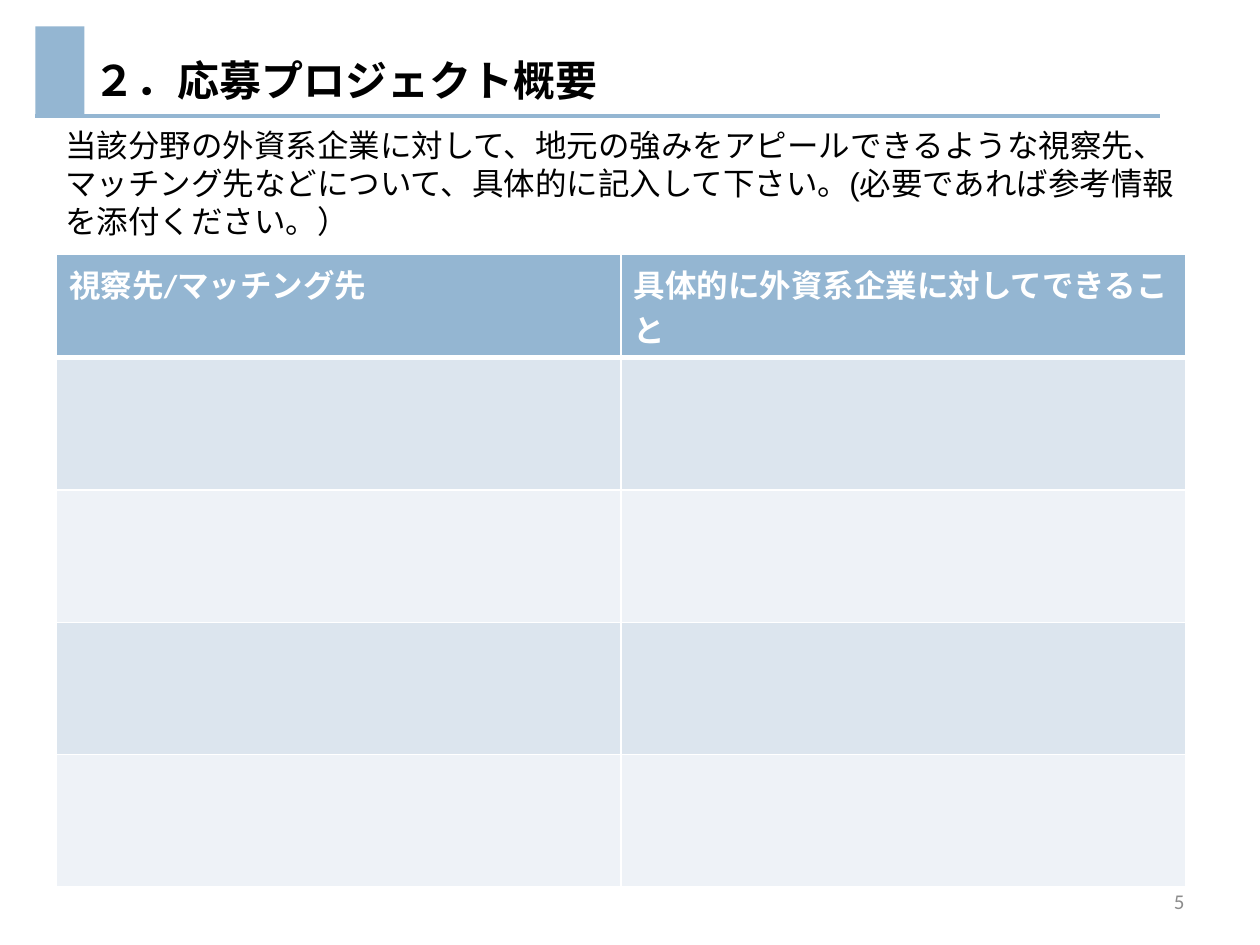
from lxml import etree
from pptx import Presentation
from pptx.dml.color import RGBColor
from pptx.enum import shapes, text
from pptx.oxml import ns
from pptx.util import Inches, Pt

COLORS = {"accent": "94B6D2", "band_dark": "DCE5EE", "band_light": "EEF2F7",
          "white": "FFFFFF", "black": "000000", "gray": "8C8C8C"}

TITLE = "２．応募プロジェクト概要"
INSTRUCTIONS = ("当該分野の外資系企業に対して、地元の強みをアピールできるような視察先、"
                "マッチング先などについて、具体的に記入して下さい。(必要であれば参考情報を添付ください。）")
HEADERS = ["視察先/マッチング先", "具体的に外資系企業に対してできること"]
PAGE_NUMBER = "5"
ENTRY_ROWS = 4
COLUMN_WIDTH, HEADER_HEIGHT, ENTRY_HEIGHT = 4.48, 0.82, 1.05


def color(name):
    return RGBColor.from_string(COLORS[name])


def write(text_frame, content, size, font="Calibri", fill="black", bold=False):
    text_frame.text = content
    paragraph = text_frame.paragraphs[0]
    run_font = paragraph.runs[0].font
    run_font.name, run_font.size, run_font.bold = font, Pt(size), bold
    run_font.color.rgb = color(fill)
    return paragraph


def add_text(slide, box, content, size, anchor=text.MSO_ANCHOR.MIDDLE, **style):
    text_frame = slide.shapes.add_textbox(*map(Inches, box)).text_frame
    text_frame.word_wrap = True
    text_frame.vertical_anchor = anchor
    return write(text_frame, content, size, **style)


def set_borders(cell, bottom_width):
    properties = cell._tc.get_or_add_tcPr()
    widths = {"lnL": 1, "lnR": 1, "lnT": 1, "lnB": bottom_width}
    for index, (side, width) in enumerate(widths.items()):
        line = etree.Element(ns.qn("a:" + side), w=str(Pt(width)))
        fill = etree.SubElement(line, ns.qn("a:solidFill"))
        etree.SubElement(fill, ns.qn("a:srgbClr"), val=COLORS["white"])
        properties.insert(index, line)


def add_heading(slide):
    rule = slide.shapes.add_connector(shapes.MSO_CONNECTOR.STRAIGHT,
                                      *map(Inches, (0.28, 0.92, 9.21, 0.92)))
    rule.line.color.rgb = color("accent")
    rule.line.width = Pt(2)
    etree.SubElement(rule._element.spPr, ns.qn("a:effectLst"))
    block = slide.shapes.add_shape(shapes.MSO_SHAPE.RECTANGLE,
                                   *map(Inches, (0.28, 0.21, 0.39, 0.71)))
    block.shadow.inherit = False
    block.fill.solid()
    block.fill.fore_color.rgb = color("accent")
    block.line.fill.background()
    add_text(slide, (0.64, 0.36, 7.48, 0.54), TITLE, 24, bold=True)


def add_entry_table(slide):
    heights = [HEADER_HEIGHT] + [ENTRY_HEIGHT] * ENTRY_ROWS
    width = COLUMN_WIDTH * len(HEADERS)
    table = slide.shapes.add_table(len(heights), len(HEADERS), Inches(0.45), Inches(2.02),
                                   Inches(width), Inches(sum(heights))).table
    for column in table.columns:
        column.width = Inches(COLUMN_WIDTH)
    for index, height in enumerate(heights):
        table.rows[index].height = Inches(height)
        band = "accent" if index == 0 else "band_dark" if index % 2 else "band_light"
        for cell, header in zip(table.rows[index].cells, HEADERS):
            cell.fill.solid()
            cell.fill.fore_color.rgb = color(band)
            set_borders(cell, 3 if index == 0 else 1)
            if index == 0:
                write(cell.text_frame, header, 18, fill="white", bold=True)


def main():
    presentation = Presentation()
    presentation.slide_width, presentation.slide_height = Inches(10), Inches(7.5)
    slide = presentation.slides.add_slide(presentation.slide_layouts[6])
    add_heading(slide)
    add_text(slide, (0.42, 0.95, 9, 1.05), INSTRUCTIONS, 18,
             anchor=text.MSO_ANCHOR.TOP, font="Arial")
    add_entry_table(slide)
    number = add_text(slide, (7.17, 6.95, 2.33, 0.4), PAGE_NUMBER, 12, fill="gray")
    number.alignment = text.PP_ALIGN.RIGHT
    presentation.save("out.pptx")


if __name__ == "__main__":
    main()
